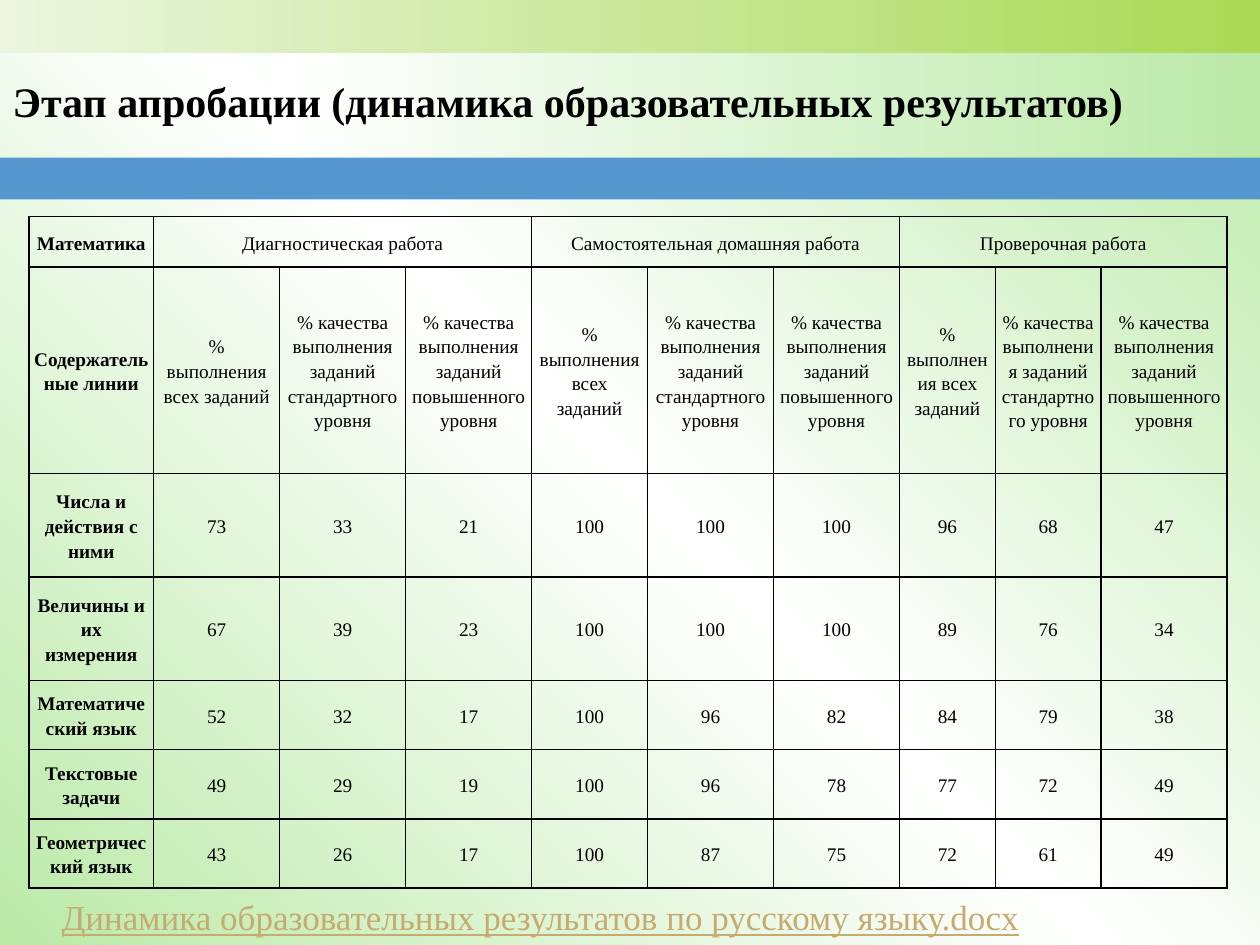
import copy
from dataclasses import dataclass

import lxml.etree
import pptx
import pptx.dml.color
import pptx.enum.shapes
import pptx.enum.text
import pptx.oxml.ns
import pptx.util

Inches = pptx.util.Inches
Pt = pptx.util.Pt
RGB = pptx.dml.color.RGBColor.from_string
ALIGN = pptx.enum.text.PP_ALIGN
ANCHOR = pptx.enum.text.MSO_ANCHOR

SLIDE_W, SLIDE_H = 10, 7.5
FONT = "Times New Roman"
COLORS = {
    "ink": "000000", "white": "FFFFFF", "mint": "BBEAA8",
    "pale_lime": "EBF5DF", "lime": "AAD955", "blue": "5598CF", "link": "C7AA6F",
}


@dataclass(frozen=True)
class Band:
    """A header stripe; its box is given in shares of the slide."""
    left: float
    top: float
    width: float
    height: float
    colors: tuple


BANDS = [
    Band(0, 0, 1, 0.056, ("pale_lime", "lime")),
    Band(0.217, 0.056, 0.783, 0.111, ("white", "mint")),
    Band(0, 0.167, 1, 0.044, ("blue",)),
]

TITLE = "Этап апробации (динамика образовательных результатов)"
RUSSIAN_RESULTS = "Динамика образовательных результатов по русскому языку.docx"

WORKS = ["Диагностическая работа", "Самостоятельная домашняя работа", "Проверочная работа"]
MEASURES = [
    "% выполнения всех заданий",
    "% качества выполнения заданий стандартного уровня",
    "% качества выполнения заданий повышенного уровня",
]
RESULTS = {
    "Числа и действия с ними": (73, 33, 21, 100, 100, 100, 96, 68, 47),
    "Величины и их измерения": (67, 39, 23, 100, 100, 100, 89, 76, 34),
    "Математический язык": (52, 32, 17, 100, 96, 82, 84, 79, 38),
    "Текстовые задачи": (49, 29, 19, 100, 96, 78, 77, 72, 49),
    "Геометрический язык": (43, 26, 17, 100, 87, 75, 72, 61, 49),
}
COLUMN_WIDTHS = [0.99, 1, 1, 1, 0.92, 1, 1, 0.76, 0.84, 1]
ROW_HEIGHTS = [0.4, 1.64, 0.82, 0.82, 0.55, 0.55, 0.55]


def apply_format(target, values: dict) -> None:
    for name, value in values.items():
        setattr(target, name, value)


def style_font(font, size: float, color: str, **extra) -> None:
    apply_format(font, {"name": FONT, "size": Pt(size), **extra})
    font.color.rgb = RGB(COLORS[color])


def fill_gradient(fill, owner, colors: tuple, angle: float) -> None:
    """Spread the colours evenly; owner is the XML element holding the fill."""
    fill.gradient()
    fill.gradient_angle = angle
    stop_list = owner.xpath(".//a:gsLst")[0]
    while len(stop_list) < len(colors):
        stop_list.append(copy.deepcopy(stop_list[-1]))
    for index, (stop, color) in enumerate(zip(fill.gradient_stops, colors)):
        stop.position = index / (len(colors) - 1)
        stop.color.rgb = RGB(COLORS[color])


def add_band(slide, band: Band) -> None:
    stripe = slide.shapes.add_shape(
        pptx.enum.shapes.MSO_SHAPE.RECTANGLE,
        Inches(band.left * SLIDE_W), Inches(band.top * SLIDE_H),
        Inches(band.width * SLIDE_W), Inches(band.height * SLIDE_H))
    stripe.shadow.inherit = False
    stripe.line.fill.background()
    if len(band.colors) > 1:
        fill_gradient(stripe.fill, stripe.element, band.colors, 0)
    else:
        stripe.fill.solid()
        stripe.fill.fore_color.rgb = RGB(COLORS[band.colors[0]])


def write_line(shape, text: str, size: float, color: str, **extra) -> None:
    frame = shape.text_frame
    apply_format(frame, {"text": text, "word_wrap": True, "vertical_anchor": ANCHOR.TOP})
    frame.paragraphs[0].alignment = ALIGN.LEFT
    style_font(frame.paragraphs[0].runs[0].font, size, color, **extra)


def draw_borders(cell, color: str, points: float) -> None:
    properties = cell._tc.get_or_add_tcPr()
    for index, side in enumerate(("lnL", "lnR", "lnT", "lnB")):
        border = lxml.etree.Element(pptx.oxml.ns.qn(f"a:{side}"), w=str(Pt(points)))
        solid = lxml.etree.SubElement(border, pptx.oxml.ns.qn("a:solidFill"))
        lxml.etree.SubElement(solid, pptx.oxml.ns.qn("a:srgbClr"), val=COLORS[color])
        properties.insert(index, border)


def write_cell(cell, text: str, bold: bool) -> None:
    apply_format(cell, {
        "text": text, "vertical_anchor": ANCHOR.MIDDLE,
        "margin_left": Inches(0.04), "margin_right": Inches(0.04),
        "margin_top": 0, "margin_bottom": 0,
    })
    paragraph = cell.text_frame.paragraphs[0]
    apply_format(paragraph, {"alignment": ALIGN.CENTER, "line_spacing": 1.15})
    style_font(paragraph.font, 11, "ink", bold=bold)
    for run in paragraph.runs:
        style_font(run.font, 11, "ink", bold=bold)
    cell.fill.background()
    draw_borders(cell, "ink", 1)


def add_results_table(slide) -> None:
    span = len(MEASURES)
    work_row = ["Математика"]
    for work in WORKS:
        work_row += [work] + [""] * (span - 1)
    rows = [work_row, ["Содержательные линии"] + MEASURES * len(WORKS)]
    rows += [[topic, *map(str, values)] for topic, values in RESULTS.items()]

    table = slide.shapes.add_table(
        len(rows), len(COLUMN_WIDTHS), Inches(0.23), Inches(1.72),
        Inches(sum(COLUMN_WIDTHS)), Inches(sum(ROW_HEIGHTS))).table
    apply_format(table, {"first_row": False, "horz_banding": False})
    for column, width in zip(table.columns, COLUMN_WIDTHS):
        column.width = Inches(width)
    for row, height in zip(table.rows, ROW_HEIGHTS):
        row.height = Inches(height)
    for r, texts in enumerate(rows):
        for c, text in enumerate(texts):
            write_cell(table.cell(r, c), text, bold=c == 0)

    # Each kind of work heads its own group of measures
    for first in range(1, len(COLUMN_WIDTHS), span):
        table.cell(0, first).merge(table.cell(0, first + span - 1))
    topics_heading = table.cell(1, 0).text_frame.paragraphs[0]
    topics_heading._p.get_or_add_pPr().set("indent", str(Inches(-0.1)))


def main() -> None:
    deck = pptx.Presentation()
    apply_format(deck, {"slide_width": Inches(SLIDE_W), "slide_height": Inches(SLIDE_H)})
    slide = deck.slides.add_slide(deck.slide_layouts.get_by_name("Title Only"))

    # Background and header stripes
    fill_gradient(slide.background.fill, slide.element, ("mint", "white", "mint"), 45)
    for band in BANDS:
        add_band(slide, band)

    # Title, brought in front of the stripes
    title = slide.shapes.title
    apply_format(title, {"left": 0, "top": Inches(0.55),
                         "width": Inches(9.22), "height": Inches(0.5)})
    write_line(title, TITLE, 24, "ink", bold=True)
    title.element.getparent().append(title.element)

    # Results in mathematics
    add_results_table(slide)

    # Reference to the results in Russian
    reference = slide.shapes.add_textbox(
        Inches(0.39), Inches(7.06), Inches(9.3), Inches(0.44))
    write_line(reference, RUSSIAN_RESULTS, 20, "link", underline=True)

    deck.save("out.pptx")


if __name__ == "__main__":
    main()
